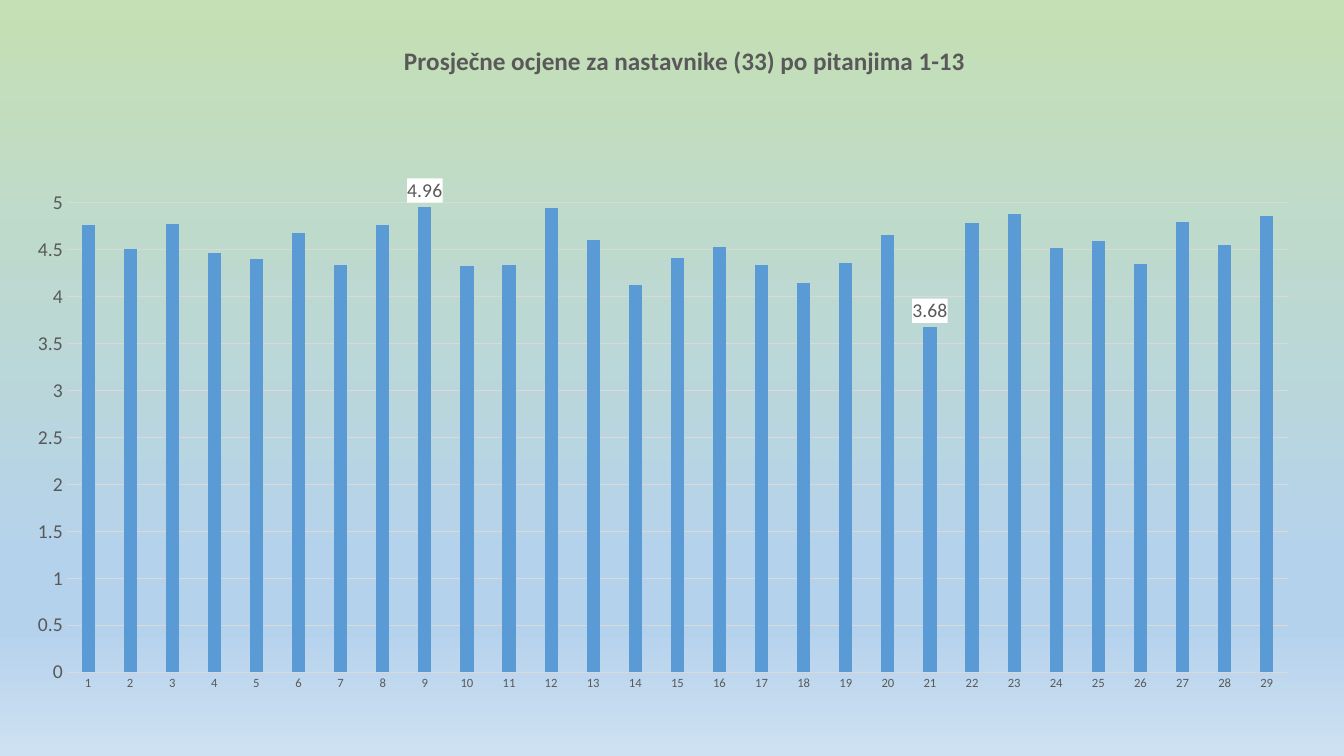
from copy import deepcopy

from lxml.etree import SubElement
from pptx import Presentation
from pptx.chart.data import CategoryChartData
from pptx.dml.color import RGBColor
from pptx.enum.chart import XL_CHART_TYPE, XL_LABEL_POSITION, XL_TICK_MARK
from pptx.oxml import parse_xml
from pptx.oxml.ns import nsdecls, qn
from pptx.util import Cm, Pt

GREEN = RGBColor(0xC5, 0xE0, 0xB4)
SKY = RGBColor(0xB5, 0xD2, 0xEC)
PALE = RGBColor(0xCE, 0xE1, 0xF2)
BLUE = RGBColor(0x5B, 0x9B, 0xD5)
GREY = RGBColor(0x59, 0x59, 0x59)
LIGHT = RGBColor(0xD9, 0xD9, 0xD9)

TITLE = "Prosječne ocjene za nastavnike (33) po pitanjima 1-13"
GRADES = [4.76, 4.51, 4.77, 4.47, 4.4, 4.68, 4.34, 4.76, 4.96, 4.33,
          4.34, 4.94, 4.6, 4.13, 4.41, 4.53, 4.34, 4.15, 4.36, 4.66,
          3.68, 4.79, 4.88, 4.52, 4.59, 4.35, 4.8, 4.55, 4.86]


def apply(obj, values):
    for name, value in values.items():
        setattr(obj, name, value)


class GradeSlide:
    """Holds the text style and the slide, and adds its elements."""

    def __init__(self, prs, font="Calibri", color=GREY):
        self.s = prs.slides.add_slide(prs.slide_layouts[6])
        self.font = font
        self.color = color

    def style(self, font, size, bold=False):
        apply(font, {"name": self.font, "size": Pt(size), "bold": bold})
        font.color.rgb = self.color

    def background(self, stops):
        fill = self.s.background.fill
        fill.gradient()
        fill.gradient_angle = 270
        gs_list = self.s.element.find(".//" + qn("a:gsLst"))
        for _ in range(len(stops) - len(gs_list)):
            gs_list.append(deepcopy(gs_list[0]))
        for stop, (position, color) in zip(fill.gradient_stops, stops):
            stop.position = position
            stop.color.rgb = color

    def column_chart(self, values, box):
        data = CategoryChartData()
        data.categories = [str(n + 1) for n in range(len(values))]
        data.add_series("Series 1", values)
        frame = self.s.shapes.add_chart(
            XL_CHART_TYPE.COLUMN_CLUSTERED, *map(Cm, box), data)
        chart = frame.chart
        chart.has_legend = False
        self.style(chart.font, 10)
        plot = chart.plots[0]
        apply(plot, {"gap_width": 219, "overlap": -27,
                     "vary_by_categories": False})
        fill = plot.series[0].format.fill
        fill.solid()
        fill.fore_color.rgb = BLUE
        return chart

    def title(self, chart, text, size):
        tf = chart.chart_title.text_frame
        tf.text = text
        self.style(tf.paragraphs[0].runs[0].font, size, True)
        chart.chart_title.include_in_layout = False

    def axis(self, axis, size, **values):
        apply(axis, {"major_tick_mark": XL_TICK_MARK.NONE,
                     "minor_tick_mark": XL_TICK_MARK.NONE, **values})
        self.style(axis.tick_labels.font, size)

    def line(self, line):
        line.color.rgb = LIGHT
        line.width = Pt(0.75)

    def label(self, chart, index, size):
        label = chart.plots[0].series[0].points[index].data_label
        self.style(label.font, size)
        label.position = XL_LABEL_POSITION.OUTSIDE_END
        text = chart.element.findall(".//" + qn("c:dLbl") + "/" + qn("c:txPr"))[-1]
        text.addprevious(parse_xml(
            f'<c:spPr {nsdecls("c", "a")}><a:solidFill>'
            '<a:srgbClr val="FFFFFF"/></a:solidFill></c:spPr>'))

    def layout(self, parent, after, **values):
        for old in parent.findall(qn("c:layout")):
            parent.remove(old)
        layout = parse_xml(f'<c:layout {nsdecls("c")}><c:manualLayout/></c:layout>')
        for name, value in values.items():
            SubElement(layout[0], qn(f"c:{name}")).set("val", str(value))
        if after is None:
            parent.insert(0, layout)
        else:
            after.addnext(layout)


def main():
    prs = Presentation()
    apply(prs, {"slide_width": Cm(33.87), "slide_height": Cm(19.05)})
    slide = GradeSlide(prs)
    slide.background([(0, GREEN), (0.74, SKY), (0.83, SKY), (1, PALE)])

    chart = slide.column_chart(GRADES, (0.76, 0.81, 32.08, 16.94))
    slide.title(chart, TITLE, 18)
    slide.axis(chart.category_axis, 9)
    slide.line(chart.category_axis.format.line)
    slide.axis(chart.value_axis, 14, minimum_scale=0, maximum_scale=5,
               major_unit=0.5, has_major_gridlines=True)
    slide.line(chart.value_axis.major_gridlines.format.line)
    chart.value_axis.format.line.fill.background()

    chart.plots[0].series[0].data_labels.show_value = False
    for grade in (max(GRADES), min(GRADES)):
        slide.label(chart, GRADES.index(grade), 14)

    title = chart.element.find(".//" + qn("c:title"))
    slide.layout(title, title.find(qn("c:tx")),
                 xMode="edge", yMode="edge", x=0.29, y=0.01)
    slide.layout(chart.element.find(".//" + qn("c:plotArea")), None,
                 layoutTarget="inner", xMode="edge", yMode="edge",
                 x=0.029, y=0.254, w=0.959, h=0.698)
    prs.save("out.pptx")


if __name__ == "__main__":
    main()
